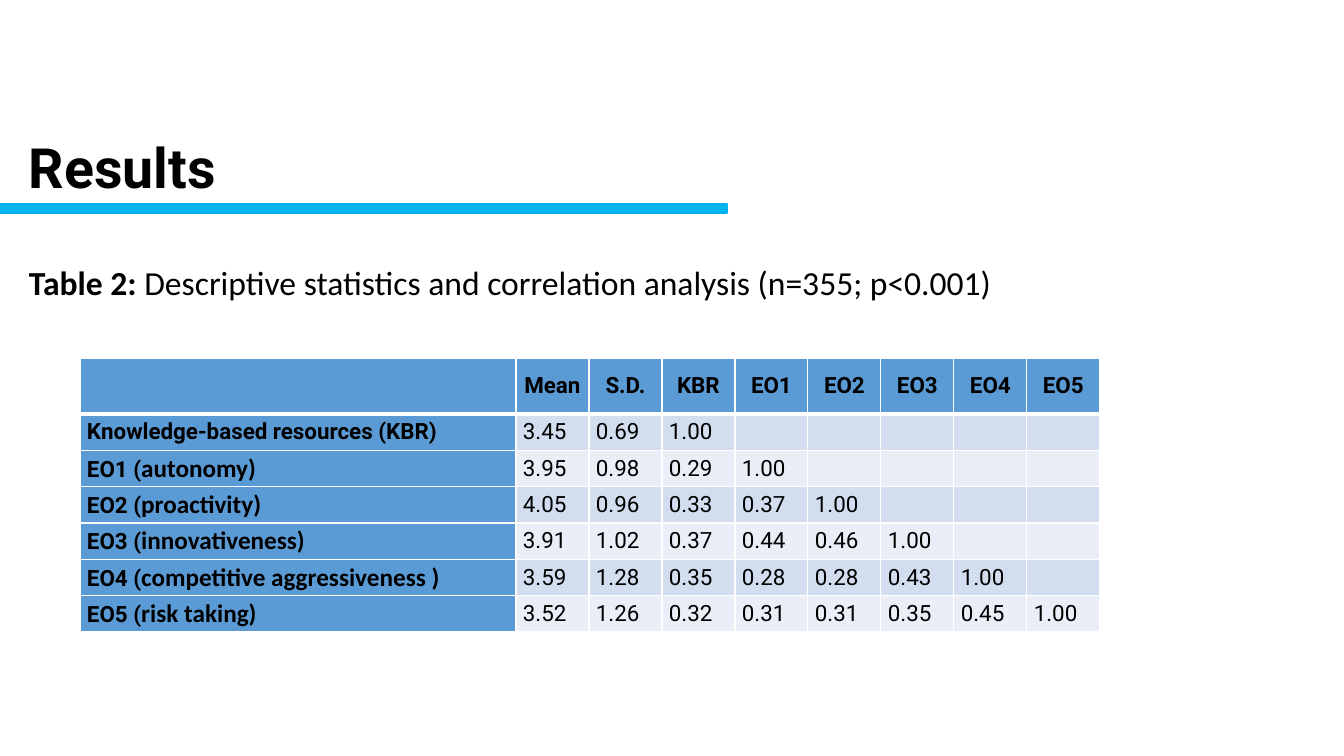
from lxml import etree
from pptx import Presentation
from pptx.dml.color import RGBColor
from pptx.enum.shapes import MSO_SHAPE
from pptx.enum.text import MSO_ANCHOR, PP_ALIGN
from pptx.oxml.ns import qn
from pptx.util import Emu, Pt

RECTANGLE = MSO_SHAPE.RECTANGLE
TOP, MIDDLE = MSO_ANCHOR.TOP, MSO_ANCHOR.MIDDLE
LEFT, CENTER = PP_ALIGN.LEFT, PP_ALIGN.CENTER

BLACK = RGBColor(0x00, 0x00, 0x00)
WHITE = RGBColor(0xFF, 0xFF, 0xFF)
CYAN = RGBColor(0x00, 0xB6, 0xED)
CYAN_EDGE = RGBColor(0x00, 0xB0, 0xF0)
HEADER_BLUE = RGBColor(0x5B, 0x9B, 0xD5)
BANDS = (RGBColor(0xD2, 0xDE, 0xEF), RGBColor(0xEA, 0xEF, 0xF7))

EMU_PER_PX = 914400 / 100.8

TITLE = {"name": "Roboto", "size": Pt(39.6), "bold": True}
CAPTION_BOLD = {"name": "Calibri", "size": Pt(24), "bold": True}
CAPTION = {**CAPTION_BOLD, "bold": False}
VALUE = {"name": "Roboto", "size": Pt(16), "bold": False}
HEADING = {**VALUE, "bold": True}
FACTOR = {"name": "Calibri", "size": Pt(18), "bold": True}

HEADINGS = ["Mean", "S.D.", "KBR", "EO1", "EO2", "EO3", "EO4", "EO5"]
RESULTS = [
    ([("Knowledge-based resources (KBR)", HEADING)], "3.45 0.69 1.00"),
    ([("EO1 (", HEADING), ("autonomy)", FACTOR)], "3.95 0.98 0.29 1.00"),
    ([("EO2 (", HEADING), ("proactivity)", FACTOR)], "4.05 0.96 0.33 0.37 1.00"),
    ([("EO3 (", HEADING), ("innovativeness)", FACTOR)], "3.91 1.02 0.37 0.44 0.46 1.00"),
    ([("EO4 (", HEADING), ("competitive aggressiveness )", FACTOR)],
     "3.59 1.28 0.35 0.28 0.28 0.43 1.00"),
    ([("EO5 (", HEADING), ("risk taking)", FACTOR)],
     "3.52 1.26 0.32 0.31 0.31 0.35 0.45 1.00"),
]


def px(length):
    """Turn a length in px into EMU."""
    return Emu(round(length * EMU_PER_PX))


class SlideBuilder:
    """Draws styled elements on the current slide."""

    def __init__(self, slide, text_color, border_color):
        """Keep the slide and its shared colours."""
        self.slide = slide
        self.text_color = text_color
        self.border_color = border_color

    def add_spans(self, para, spans):
        """Add formatted spans to a paragraph."""
        for text, style in spans:
            span = para.add_run()
            span.text = text
            for name, value in style.items():
                setattr(span.font, name, value)
            span.font.color.rgb = self.text_color

    def text(self, left, top, width, height, spans, anchor):
        """Add a one-paragraph text box."""
        box = self.slide.shapes.add_textbox(*map(px, (left, top, width, height)))
        frame = box.text_frame
        frame.word_wrap = True
        frame.vertical_anchor = anchor
        para = frame.paragraphs[0]
        para.line_spacing = 0.9
        self.add_spans(para, spans)

    def bar(self, left, top, width, height, fill, edge):
        """Add a filled rectangle with a thin outline."""
        shape = self.slide.shapes.add_shape(RECTANGLE, *map(px, (left, top, width, height)))
        shape.shadow.inherit = False
        shape.fill.solid()
        shape.fill.fore_color.rgb = fill
        shape.line.color.rgb = edge
        shape.line.width = Pt(1)

    def border(self, cell, side, points):
        """Draw one side of a cell."""
        line = etree.SubElement(cell._tc.get_or_add_tcPr(), qn(f"a:ln{side}"), w=str(Pt(points)))
        fill = etree.SubElement(line, qn("a:solidFill"))
        etree.SubElement(fill, qn("a:srgbClr"), val=str(self.border_color))

    def cell(self, cell, spans, align, fill, borders):
        """Fill, outline and label one table cell."""
        for side, points in borders.items():
            self.border(cell, side, points)
        cell.fill.solid()
        cell.fill.fore_color.rgb = fill
        margins = {"margin_left": 7, "margin_right": 7, "margin_top": 0, "margin_bottom": 0}
        for name, length in margins.items():
            setattr(cell, name, px(length))
        cell.vertical_anchor = MIDDLE
        para = cell.text_frame.paragraphs[0]
        para.alignment = align
        self.add_spans(para, spans)

    def table(self, left, top, width, height, label_width, header_height, headings, results):
        """Add a table with a header row, a label column and banded values."""
        shape = self.slide.shapes.add_table(
            len(results) + 1, len(headings) + 1, *map(px, (left, top, width, height)))
        table = shape.table
        for index, column in enumerate(table.columns):
            column.width = px((width - label_width) / len(headings) if index else label_width)
        for index, row in enumerate(table.rows):
            row.height = px((height - header_height) / len(results) if index else header_height)

        header_borders = {"L": 1, "R": 1, "T": 1, "B": 3}
        for index, heading in enumerate(["", *headings]):
            spans = [(heading, HEADING)] if heading else []
            self.cell(table.cell(0, index), spans, CENTER, HEADER_BLUE, header_borders)

        body_borders = {"L": 1, "R": 1, "B": 1}
        for row, (label, numbers) in enumerate(results, start=1):
            values = [[(number, VALUE)] for number in numbers.split()]
            blanks = [[]] * (len(headings) - len(values))
            for index, spans in enumerate([label, *values, *blanks]):
                fill = BANDS[(row - 1) % 2] if index else HEADER_BLUE
                self.cell(table.cell(row, index), spans, LEFT, fill, body_borders)


def main():
    """Build and save the results slide."""
    deck = Presentation()
    deck.slide_width, deck.slide_height = px(1344), px(756)
    page = SlideBuilder(deck.slides.add_slide(deck.slide_layouts[6]), BLACK, WHITE)
    caption = [
        ("Table 2:", CAPTION_BOLD),
        (" Descriptive statistics and correlation analysis (n=355; p<0.001)", CAPTION),
    ]
    page.text(19, 261, 1142, 39, caption, TOP)
    page.text(19, 132, 1212, 77, [("Results", TITLE)], MIDDLE)
    page.bar(0, 204, 727, 9, CYAN, CYAN_EDGE)
    page.table(80, 358, 1020, 274, 436, 56, HEADINGS, RESULTS)
    deck.save("out.pptx")


if __name__ == "__main__":
    main()
